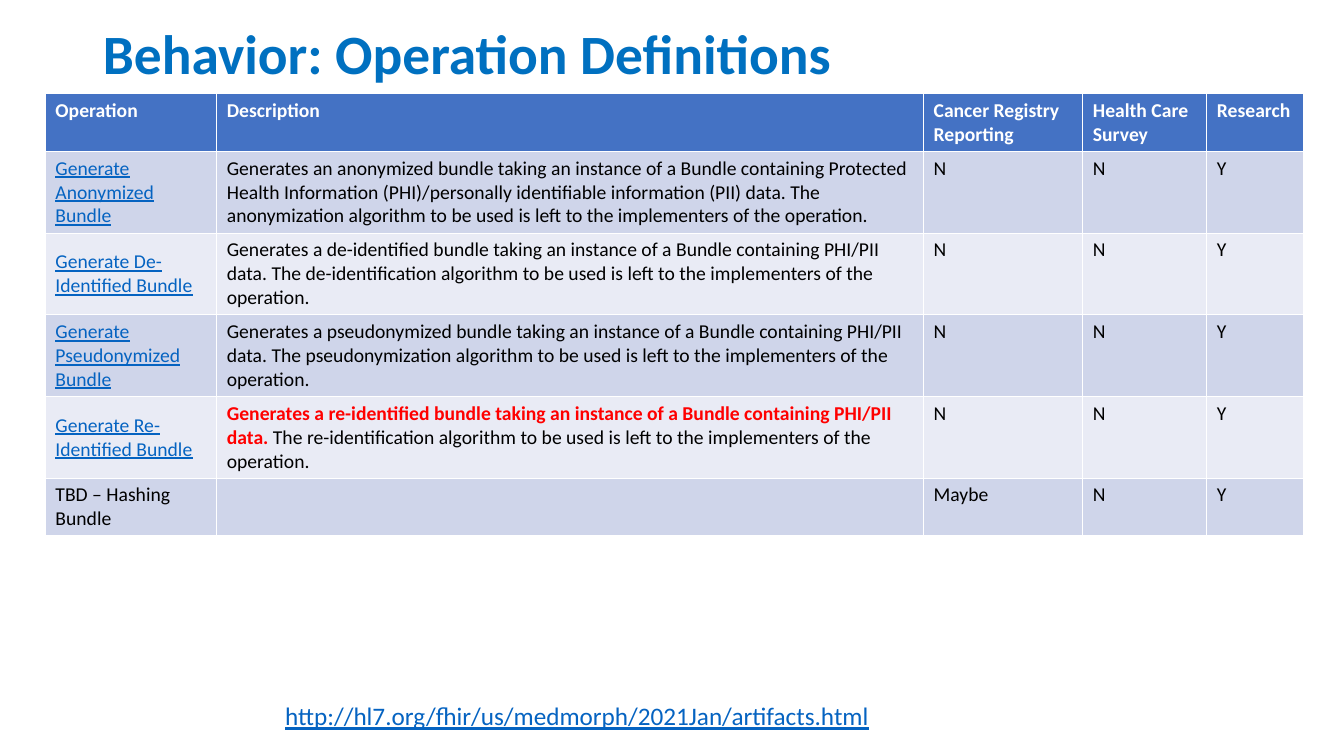
from pptx import Presentation
from pptx.dml.color import RGBColor
from pptx.enum.text import MSO_ANCHOR, MSO_AUTO_SIZE, PP_ALIGN
from pptx.util import Inches, Pt

LEFT = PP_ALIGN.LEFT
TOP, MIDDLE = MSO_ANCHOR.TOP, MSO_ANCHOR.MIDDLE
NO_FIT, GROW = MSO_AUTO_SIZE.NONE, MSO_AUTO_SIZE.SHAPE_TO_FIT_TEXT

TITLE_BLUE = RGBColor(0x00, 0x70, 0xC0)
LINK_BLUE = RGBColor(0x05, 0x63, 0xC1)
HEADER_BLUE = RGBColor(0x44, 0x72, 0xC4)
DARK_BAND = RGBColor(0xCF, 0xD5, 0xEA)
LIGHT_BAND = RGBColor(0xE9, 0xEB, 0xF5)
RED = RGBColor(0xFF, 0x00, 0x00)
WHITE = RGBColor(0xFF, 0xFF, 0xFF)
BLACK = RGBColor(0x00, 0x00, 0x00)

COLUMN_WIDTHS = [1.7, 7.01, 1.58, 1.23, 0.96]
ROW_HEIGHT = 0.41
HEADERS = ["Operation", "Description", "Cancer Registry Reporting", "Health Care Survey", "Research"]
OPERATIONS = [
    ("Generate Anonymized Bundle", "",
     "Generates an anonymized bundle taking an instance of a Bundle containing Protected Health "
     "Information (PHI)/personally identifiable information (PII) data. The anonymization algorithm "
     "to be used is left to the implementers of the operation.", "N", "N", "Y"),
    ("Generate De-Identified Bundle", "",
     "Generates a de-identified bundle taking an instance of a Bundle containing PHI/PII data. "
     "The de-identification algorithm to be used is left to the implementers of the operation.",
     "N", "N", "Y"),
    ("Generate Pseudonymized Bundle", "",
     "Generates a pseudonymized bundle taking an instance of a Bundle containing PHI/PII data. "
     "The pseudonymization algorithm to be used is left to the implementers of the operation.",
     "N", "N", "Y"),
    ("Generate Re-Identified Bundle",
     "Generates a re-identified bundle taking an instance of a Bundle containing PHI/PII data. ",
     "The re-identification algorithm to be used is left to the implementers of the operation.",
     "N", "N", "Y"),
    ("TBD – Hashing Bundle", "", "", "Maybe", "N", "Y"),
]


class SlideBuilder:
    """Holds the text style and the current slide, and adds each kind of element."""

    def __init__(self, slide, font_name="Calibri"):
        self.slide = slide
        self.font_name = font_name

    def style(self, font, size, color, bold=False, underline=False):
        font.name = self.font_name
        font.size = Pt(size)
        font.color.rgb = color
        font.bold = bold
        font.underline = underline

    def title(self, text, left, top, width, height):
        shape = self.slide.shapes.title
        shape.left, shape.top = Inches(left), Inches(top)
        shape.width, shape.height = Inches(width), Inches(height)
        frame = shape.text_frame
        frame.text = text
        frame.auto_size = NO_FIT
        frame.vertical_anchor = MIDDLE
        paragraph = frame.paragraphs[0]
        paragraph.alignment = LEFT
        paragraph.line_spacing = 0.9
        self.style(paragraph.font, 39.6, TITLE_BLUE, bold=True)

    def cell(self, cell, text, fill, color=BLACK, anchor=TOP, emphasis="", **look):
        cell.fill.solid()
        cell.fill.fore_color.rgb = fill
        cell.vertical_anchor = anchor
        paragraph = cell.text_frame.paragraphs[0]
        self.style(paragraph.font, 14, color, **look)
        if emphasis:
            run = paragraph.add_run()
            run.text = emphasis
            self.style(run.font, 14, RED, bold=True)
        if text:
            run = paragraph.add_run()
            run.text = text
            self.style(run.font, 14, color, **look)

    def table(self, left, top):
        row_count = len(OPERATIONS) + 1
        table = self.slide.shapes.add_table(
            row_count, len(HEADERS), Inches(left), Inches(top),
            Inches(sum(COLUMN_WIDTHS)), Inches(ROW_HEIGHT * row_count)).table
        for column, width in zip(table.columns, COLUMN_WIDTHS):
            column.width = Inches(width)
        for index, header in enumerate(HEADERS):
            self.cell(table.cell(0, index), header, HEADER_BLUE, WHITE, bold=True)
        for row, (name, emphasis, description, *answers) in enumerate(OPERATIONS, 1):
            band = DARK_BAND if row % 2 else LIGHT_BAND
            linked = name.startswith("Generate")
            self.cell(table.cell(row, 0), name, band, LINK_BLUE if linked else BLACK,
                      MIDDLE, underline=linked)
            self.cell(table.cell(row, 1), description, band, anchor=MIDDLE, emphasis=emphasis)
            for column, answer in enumerate(answers, 2):
                self.cell(table.cell(row, column), answer, band)

    def address(self, text, left, top, width, height):
        shape = self.slide.shapes.add_textbox(Inches(left), Inches(top), Inches(width), Inches(height))
        frame = shape.text_frame
        frame.word_wrap = True
        frame.auto_size = GROW
        frame.text = text
        self.style(frame.paragraphs[0].font, 18, LINK_BLUE, underline=True)


def main():
    presentation = Presentation()
    presentation.slide_width = Inches(13.33)
    presentation.slide_height = Inches(7.5)
    builder = SlideBuilder(presentation.slides.add_slide(presentation.slide_layouts[5]))
    builder.title("Behavior: Operation Definitions", 0.92, 0.19, 11.5, 0.74)
    builder.table(0.45, 0.93)
    builder.address("http://hl7.org/fhir/us/medmorph/2021Jan/artifacts.html", 2.73, 6.9, 6.67, 0.4)
    presentation.save("out.pptx")


if __name__ == "__main__":
    main()
